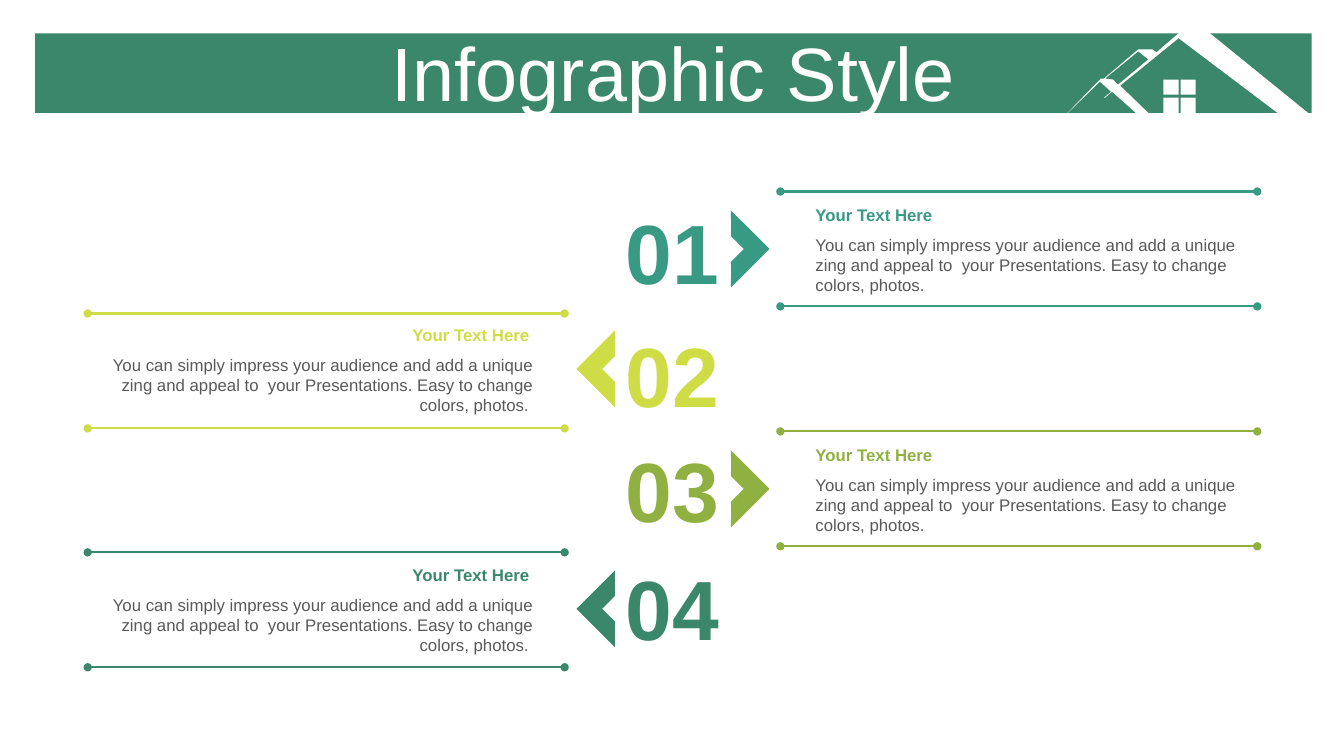
from lxml.etree import SubElement
from pptx import Presentation
from pptx.dml.color import RGBColor
from pptx.enum.shapes import MSO_CONNECTOR, MSO_SHAPE
from pptx.enum.text import MSO_ANCHOR, MSO_AUTO_SIZE, PP_ALIGN
from pptx.oxml.ns import qn
from pptx.util import Inches, Pt

GREEN = RGBColor(0x3A, 0x87, 0x6B)
TEAL = RGBColor(0x39, 0x9A, 0x84)
LIME = RGBColor(0xCE, 0xDD, 0x46)
OLIVE = RGBColor(0x90, 0xB1, 0x41)
GRAY = RGBColor(0x59, 0x59, 0x59)
WHITE = RGBColor(0xFF, 0xFF, 0xFF)

HEADING = "Your Text Here"
DESCRIPTION = ("You can simply impress your audience and add a unique zing and appeal to  "
               "your Presentations. Easy to change colors, photos.")

# Number, colour, side of the callout, top of its upper rule, top of the number
STEPS = [
    ("01", TEAL, "right", 1.9, 1.93),
    ("02", LIME, "left", 3.11, 3.15),
    ("03", OLIVE, "right", 4.28, 4.29),
    ("04", GREEN, "left", 5.48, 5.47),
]
STEP_PITCH = 1.19

# Roof outlines in hundredths of an inch from the banner's top left corner
ROOF_GAP = [(1094, 18), (1061, 45), (1069, 46), (1074, 51), (1104, 26)]
ROOF = [(1134, 0), (1165, 0), (1266, 82), (1236, 82), (1134, 5), (1076, 52),
        (1108, 83), (1096, 83), (1068, 58), (1061, 64), (1060, 64), (1067, 58),
        (1056, 48), (1020, 83), (1021, 82), (1057, 45), (1060, 45), (1094, 16),
        (1108, 16), (1112, 19)]
PANES = [[(x, y), (x + 15, y), (x + 15, y + 15), (x, y + 15)]
         for x in (1119, 1136) for y in (46, 64)]


def paint(shape, color):
    shape.shadow.inherit = False
    shape.fill.solid()
    shape.fill.fore_color.rgb = color
    shape.line.fill.background()


def write(frame, text, size, color, align, bold=False):
    frame.word_wrap = True
    paragraph = frame.paragraphs[0]
    paragraph.alignment = align
    run = paragraph.add_run()
    run.text = text
    run.font.name = "Arial"
    run.font.size = Pt(size)
    run.font.bold = bold
    run.font.color.rgb = color
    return paragraph


def add_text(slide, left, top, width, height, text, size, color, align, bold=False):
    box = slide.shapes.add_textbox(Inches(left), Inches(top), Inches(width), Inches(height))
    write(box.text_frame, text, size, color, align, bold)
    return box


def add_house(slide, left, top):
    contours = [ROOF, ROOF_GAP] + PANES
    builder = slide.shapes.build_freeform(*ROOF[0], scale=Inches(0.01))
    for contour in contours:
        builder.move_to(*contour[0])
        builder.add_line_segments(contour[1:], close=True)
    paint(builder.convert_to_shape(Inches(left), Inches(top)), WHITE)


def add_banner(slide, left, top, width, height):
    band = slide.shapes.add_shape(MSO_SHAPE.RECTANGLE, Inches(left), Inches(top),
                                  Inches(width), Inches(height))
    paint(band, GREEN)
    add_house(slide, left, top)

    title = slide.shapes.title
    title.left, title.top = Inches(left), Inches(top + 0.04)
    title.width, title.height = Inches(width), Inches(height)
    frame = title.text_frame
    frame.auto_size = MSO_AUTO_SIZE.NONE
    frame.vertical_anchor = MSO_ANCHOR.MIDDLE
    paragraph = write(frame, "Infographic Style", 54, WHITE, PP_ALIGN.CENTER)
    paragraph.line_spacing = 0.9
    paragraph.space_before = Pt(10)
    slide.shapes._spTree.append(title._element)  # in front of the band


def add_rule(slide, left, top, width, color):
    """Horizontal line with a dot at both ends."""
    rule = slide.shapes.add_connector(MSO_CONNECTOR.STRAIGHT, Inches(left), Inches(top),
                                      Inches(left + width), Inches(top))
    rule.line.color.rgb = color
    rule.line.width = Pt(1.5)
    outline = rule.line._get_or_add_ln()
    for end in ("a:headEnd", "a:tailEnd"):
        SubElement(outline, qn(end), type="oval")
    SubElement(rule._element.spPr, qn("a:effectLst"))


def add_callout(slide, side, rule_top, text_top, color):
    if side == "right":
        rule_left, text_left, align, ending = 7.74, 7.99, PP_ALIGN.LEFT, ""
    else:
        rule_left, text_left, align, ending = 0.87, 0.99, PP_ALIGN.RIGHT, " "
    add_text(slide, text_left, text_top + 0.3, 4.4, 0.71,
             DESCRIPTION + ending, 12, GRAY, align)
    add_text(slide, text_left, text_top, 4.36, 0.3, HEADING, 12, color, align, bold=True)
    for top in (rule_top, rule_top + 1.14):
        add_rule(slide, rule_left, top, 4.73, color)


def add_pointer(slide, side, top, color):
    left, rotation = (6.98, 135) if side == "right" else (5.83, 315)
    pointer = slide.shapes.add_shape(MSO_SHAPE.HALF_FRAME, Inches(left), Inches(top),
                                     Inches(0.54), Inches(0.54))
    pointer.rotation = rotation
    paint(pointer, color)


def add_step(slide, index, number, color, side, rule_top, number_top):
    text_top = 1.98 + index * STEP_PITCH
    label = add_text(slide, 6.1, number_top, 1.14, 1.11, number, 60, color,
                     PP_ALIGN.CENTER, bold=True)
    label.text_frame.vertical_anchor = MSO_ANCHOR.MIDDLE
    add_callout(slide, side, rule_top, text_top, color)
    add_pointer(slide, side, text_top + 0.22, color)


def main():
    deck = Presentation()
    deck.slide_width, deck.slide_height = Inches(13.33), Inches(7.5)
    slide = deck.slides.add_slide(deck.slide_layouts[5])
    add_banner(slide, 0.35, 0.33, 12.66, 0.79)
    for index, step in enumerate(STEPS):
        add_step(slide, index, *step)
    deck.save("out.pptx")


if __name__ == "__main__":
    main()
